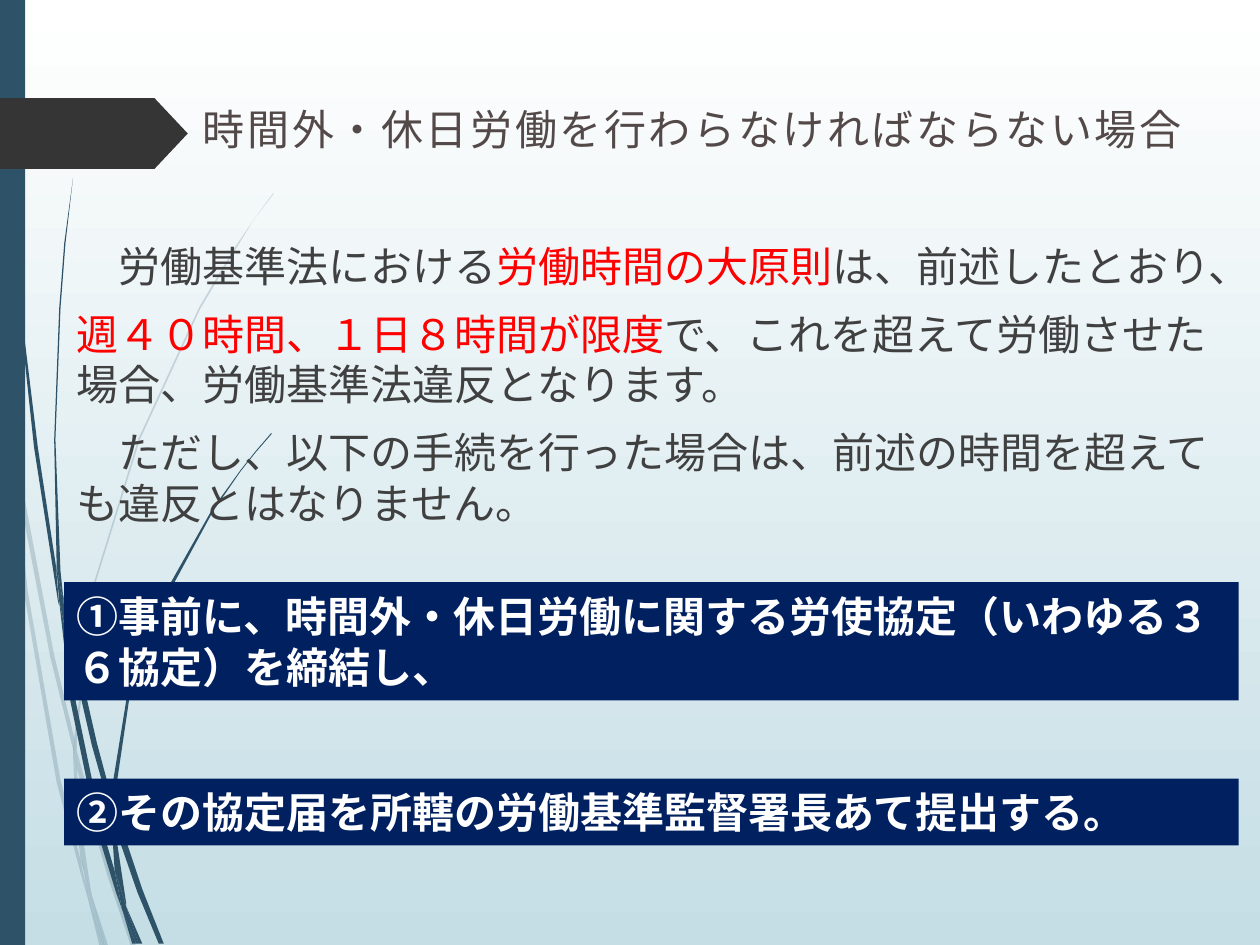
import pptx
import pptx.dml.color
import pptx.enum.lang
import pptx.enum.shapes
import pptx.enum.text
import pptx.util
from dataclasses import dataclass
from lxml import etree
from pptx.oxml.ns import qn

Inches, Pt = pptx.util.Inches, pptx.util.Pt
RGB = pptx.dml.color.RGBColor.from_string
SHAPE = pptx.enum.shapes.MSO_SHAPE


@dataclass
class Theme:
    sky: str = "FFFFFF"
    mist: str = "C5DEE5"
    teal: str = "2E5369"
    charcoal: str = "353535"
    title: str = "534949"
    text: str = "404040"
    accent: str = "FF0000"
    navy: str = "002060"
    white: str = "FFFFFF"
    heading_font: str = "Karla"
    body_font: str = "Quicksand"
    size: int = 24


theme = Theme()


def add_run(p, text, color=theme.text, font=theme.body_font, bold=False, tracking=0):
    """Append a Japanese run; tracking is in hundredths of a point."""
    r = p.add_run()
    r.text = text
    f = r.font
    f.size, f.bold, f.name = Pt(theme.size), bold, font
    f.color.rgb = RGB(color)
    f.language_id = pptx.enum.lang.MSO_LANGUAGE_ID.JAPANESE
    rpr = r._r.get_or_add_rPr()
    rpr.find(qn("a:latin")).addnext(etree.Element(qn("a:ea"), typeface=font))
    if tracking:
        rpr.set("spc", str(tracking))


def paint(sp, color, alpha=100):
    """Flat fill without line or shadow; alpha is a percentage."""
    sp.shadow.inherit = False
    sp.line.fill.background()
    sp.fill.solid()
    sp.fill.fore_color.rgb = RGB(color)
    if alpha < 100:
        clr = sp._element.spPr.find(".//" + qn("a:srgbClr"))
        etree.SubElement(clr, qn("a:alpha"), val=str(alpha * 1000))


prs = pptx.Presentation()
prs.slide_width, prs.slide_height = Inches(10), Inches(7.5)
s = prs.slides.add_slide(prs.slide_layouts[5])

bg = s.background.fill
bg.gradient()
bg.gradient_angle = 270
for stop, color, position in zip(bg.gradient_stops, (theme.sky, theme.mist), (0, 1)):
    stop.color.rgb = RGB(color)
    stop.position = position

# Grass blades: outlines in hundredths of an inch
pale_blades = [
    [(8, 350), (6, 322), (0, 282), (0, 299), (7, 344)],
    [(40, 522), (59, 599), (59, 586), (43, 520), (10, 345), (12, 376)],
    [(64, 607), (61, 596), (61, 610), (85, 694), (104, 751), (108, 751), (88, 692)],
    [(83, 751), (86, 751), (73, 711)],
    [(64, 683), (48, 619), (22, 469), (12, 376), (8, 350), (19, 470), (45, 621),
     (64, 693), (70, 714), (69, 707)],
    [(58, 599), (60, 646), (64, 683), (67, 692), (73, 711), (72, 706), (63, 646),
     (61, 610), (61, 608)],
    [(61, 584), (76, 462), (111, 349), (159, 245), (187, 198), (201, 175), (217, 154),
     (217, 153), (201, 175), (186, 197), (158, 244), (110, 348), (75, 461), (59, 584),
     (59, 586), (61, 596)],
    [(70, 714), (79, 751), (82, 751)],
    [(61, 608), (61, 610), (61, 596), (59, 586), (58, 599)],
    [(67, 692), (65, 683), (69, 707), (70, 714), (82, 751), (83, 751), (73, 711)],
]
dark_blades = [
    [(5, 110), (14, 233), (27, 355), (46, 477), (47, 481), (45, 457), (45, 453),
     (30, 355), (15, 232), (6, 109), (4, 48), (3, 0), (2, 0), (3, 48)],
    [(73, 592), (88, 645), (88, 633), (88, 631), (77, 590), (50, 472), (53, 505)],
    [(94, 649), (91, 641), (91, 656), (109, 708), (126, 749), (130, 749), (113, 706)],
    [(91, 691), (81, 657), (60, 556), (53, 505), (47, 477), (56, 557), (77, 659),
     (92, 708), (97, 722), (96, 717)],
    [(50, 472), (48, 453), (44, 349), (48, 245), (52, 193), (58, 141), (58, 141),
     (51, 193), (47, 245), (43, 349), (45, 449), (49, 472)],
    [(110, 749), (113, 749), (100, 719)],
    [(47, 477), (53, 505), (50, 472), (49, 472), (45, 449), (45, 453)],
    [(91, 633), (103, 552), (131, 476), (169, 406), (191, 374), (203, 359), (216, 344),
     (215, 344), (203, 358), (191, 373), (168, 405), (129, 474), (101, 551), (88, 631),
     (91, 641)],
    [(97, 722), (105, 749), (108, 749)],
    [(88, 645), (91, 691), (96, 706), (100, 719), (100, 716), (91, 656), (90, 651)],
    [(96, 706), (91, 691), (96, 717), (97, 722), (108, 749), (110, 749), (100, 719)],
]
for blades, alpha in ((pale_blades, 20), (dark_blades, 100)):
    for start, *points in blades:
        builder = s.shapes.build_freeform(*start, scale=Inches(0.01))
        builder.add_line_segments(points, close=True)
        paint(builder.convert_to_shape(), theme.teal, alpha)

side_bar = s.shapes.add_shape(SHAPE.RECTANGLE, 0, 0, Inches(0.2), prs.slide_height)
paint(side_bar, theme.teal)
arrow = s.shapes.add_shape(SHAPE.PENTAGON, 0, Inches(0.78), Inches(1.49), Inches(0.56))
arrow.adjustments[0] = 0.47
paint(arrow, theme.charcoal)

title = s.shapes.title
title.left, title.top = Inches(1.46), Inches(0.77)
title.width, title.height = Inches(8.37), Inches(0.5)
tf = title.text_frame
tf.word_wrap, tf.auto_size = True, pptx.enum.text.MSO_AUTO_SIZE.NONE
tf.vertical_anchor = pptx.enum.text.MSO_ANCHOR.MIDDLE
tf.margin_left = Inches(0.15)
p = tf.paragraphs[0]
p.alignment = pptx.enum.text.PP_ALIGN.LEFT
add_run(p, "時間外・休日労働を行わらなければならない場合", color=theme.title,
        font=theme.heading_font, tracking=150)

left, width = Inches(0.51), Inches(9.32)
body = [
    [("　労働基準法における", theme.text), ("労働時間の大原則", theme.accent),
     ("は、前述したとおり、", theme.text)],
    [("週４０時間、１日８時間が限度", theme.accent),
     ("で、これを超えて労働させた場合、労働基準法違反となります。", theme.text)],
    [("　ただし、以下の手続を行った場合は、前述の時間を超えても違反とはなりません。",
      theme.text)],
]
tf = s.shapes.add_textbox(left, Inches(1.86), width, Inches(2.28)).text_frame
tf.word_wrap = True
for i, runs in enumerate(body):
    p = tf.add_paragraph() if i else tf.paragraphs[0]
    p.space_before = Pt(10 if i else 0)
    for text, color in runs:
        add_run(p, text, color=color)

steps = [
    (4.62, 0.94, "①事前に、時間外・休日労働に関する労使協定（いわゆる３６協定）を締結し、"),
    (6.18, 0.53, "②その協定届を所轄の労働基準監督署長あて提出する。"),
]
for top, height, text in steps:
    sp = s.shapes.add_shape(SHAPE.RECTANGLE, left, Inches(top), width, Inches(height))
    paint(sp, theme.navy)
    tf = sp.text_frame
    tf.word_wrap = True
    tf.vertical_anchor = pptx.enum.text.MSO_ANCHOR.MIDDLE
    p = tf.paragraphs[0]
    p.alignment = pptx.enum.text.PP_ALIGN.LEFT
    add_run(p, text, color=theme.white, bold=True)

prs.save("out.pptx")
